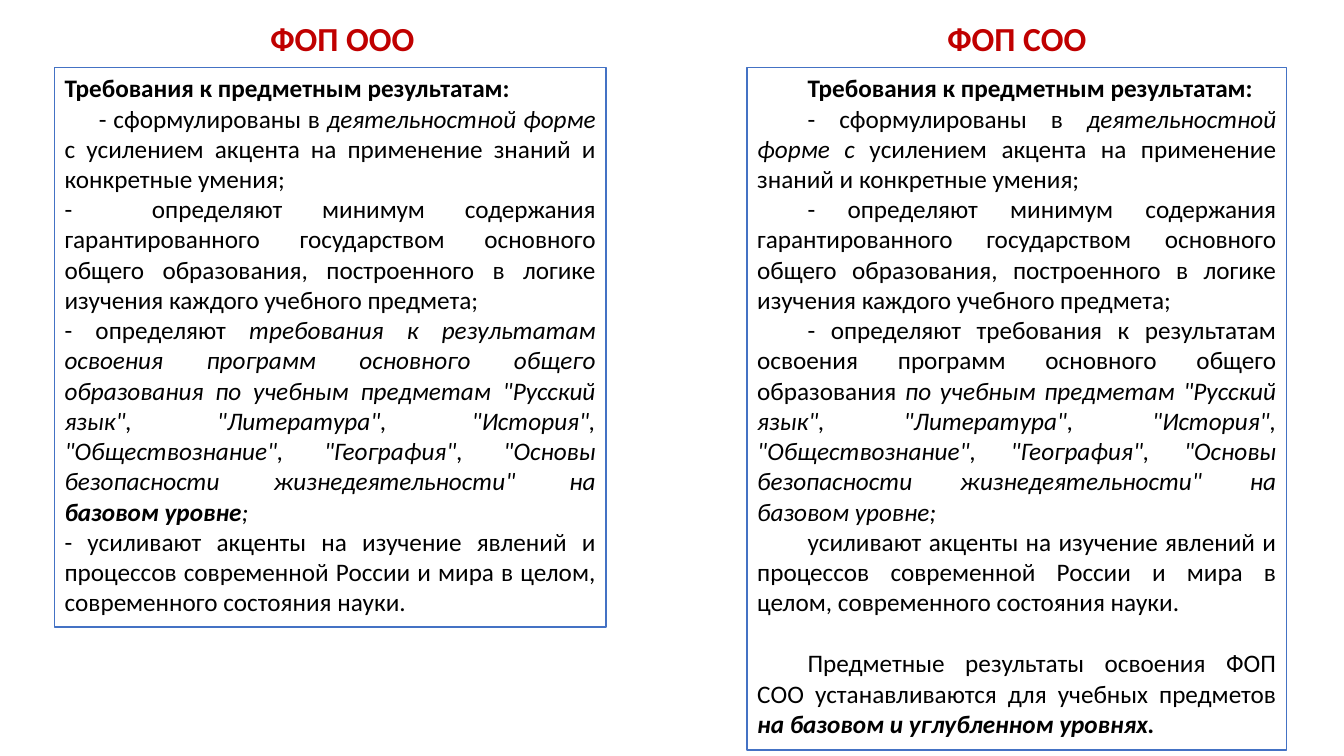
import pptx
import pptx.util
import pptx.dml.color
import pptx.enum.text
import lxml.etree
from pptx.oxml.ns import qn

RED, BLACK, WHITE, BLUE = "C00000", "000000", "FFFFFF", "4472C4"
Inches = pptx.util.Inches
CENTER = pptx.enum.text.PP_ALIGN.CENTER
JUSTIFY = pptx.enum.text.PP_ALIGN.JUSTIFY
LEFT = pptx.enum.text.PP_ALIGN.LEFT


def color(hex_string):
    return pptx.dml.color.RGBColor.from_string(hex_string)


def write_paragraph(paragraph, text, size=18, fill=BLACK, align=JUSTIFY, indent=0, before=0):
    """Text is a list of (words, style) pairs; style holds b for bold, i for italic."""
    paragraph.alignment = align
    paragraph.space_before = pptx.util.Pt(before)
    properties = paragraph._p.get_or_add_pPr()
    properties.set("marL", "0")
    properties.set("indent", str(Inches(indent)))
    lxml.etree.SubElement(properties, qn("a:buNone"))
    for words, style in text:
        run = paragraph.add_run()
        run.text = words
        run.font.name = "Calibri"
        run.font.size = pptx.util.Pt(size)
        run.font.color.rgb = color(fill)
        run.font.bold = "b" in style
        run.font.italic = "i" in style


# Wording shared by both columns
requirements = "Требования к предметным результатам:"
minimum = (
    "определяют минимум содержания гарантированного государством основного общего "
    "образования, построенного в логике изучения каждого учебного предмета;"
)
results = "требования к результатам освоения программ основного общего образования "
subjects = (
    'по учебным предметам "Русский язык", "Литература", "История", "Обществознание", '
    '"География", "Основы безопасности жизнедеятельности" на '
)
applying = "усилением акцента на применение знаний и конкретные умения;"
accents = (
    "усиливают акценты на изучение явлений и процессов современной России "
    "и мира в целом, современного состояния науки."
)

# Each paragraph: runs, then its format
basic_paragraphs = [
    ([(requirements, "b")], {"align": LEFT}),
    ([("- сформулированы в ", ""), ("деятельностной форме ", "i"), ("с " + applying, "")],
     {"indent": 0.34}),
    ([("-  " + minimum, "")], {}),
    ([("- определяют ", ""), (results + subjects, "i"), ("базовом уровне", "bi"), (";", "i")], {}),
    ([("- " + accents, "")], {}),
]
secondary_paragraphs = [
    ([(requirements, "b")], {"indent": 0.5}),
    ([("- сформулированы в ", ""), ("деятельностной форме с", "i"), (" " + applying, "")],
     {"indent": 0.5}),
    ([("- " + minimum, "")], {"indent": 0.5}),
    ([("- определяют " + results, ""), (subjects + "базовом уровне;", "i")], {"indent": 0.5}),
    ([(accents, "")], {"indent": 0.5}),
    ([("Предметные результаты освоения ФОП СОО устанавливаются для учебных предметов ", ""),
      ("на базовом и углубленном уровнях.", "bi")], {"indent": 0.5, "before": 22}),
]
heading_format = {"size": 24, "fill": RED, "align": CENTER}

# Placeholder number, position and size, paragraphs
blocks = [
    (1, (1.5, 0.13, 3.79, 0.5), [([("ФОП ООО", "b")], heading_format)]),
    (2, (0.54, 0.67, 5.47, 5.55), basic_paragraphs),
    (3, (9.1, 0.13, 1.97, 0.5), [([("ФОП СОО", "b")], heading_format)]),
    (4, (7.41, 0.67, 5.35, 6.77), secondary_paragraphs),
]

# Slide with the comparison layout
presentation = pptx.Presentation()
presentation.slide_width = Inches(13.33)
presentation.slide_height = Inches(7.5)
slide = presentation.slides.add_slide(presentation.slide_layouts.get_by_name("Comparison"))
placeholders = {shape.placeholder_format.idx: shape for shape in slide.placeholders}

# Headings and framed texts
for number, box, paragraphs in blocks:
    shape = placeholders[number]
    shape.left, shape.top, shape.width, shape.height = map(Inches, box)
    frame = shape.text_frame
    frame.word_wrap = True
    frame.auto_size = pptx.enum.text.MSO_AUTO_SIZE.NONE
    frame.vertical_anchor = pptx.enum.text.MSO_ANCHOR.TOP
    if number in (2, 4):
        shape.fill.solid()
        shape.fill.fore_color.rgb = color(WHITE)
        shape.line.color.rgb = color(BLUE)
        shape.line.width = pptx.util.Pt(1)
    for position, (text, options) in enumerate(paragraphs):
        paragraph = frame.add_paragraph() if position else frame.paragraphs[0]
        write_paragraph(paragraph, text, **options)

# Remove the placeholders left empty
for shape in list(slide.placeholders):
    if not shape.text_frame.text:
        shape.element.getparent().remove(shape.element)

presentation.save("out.pptx")
